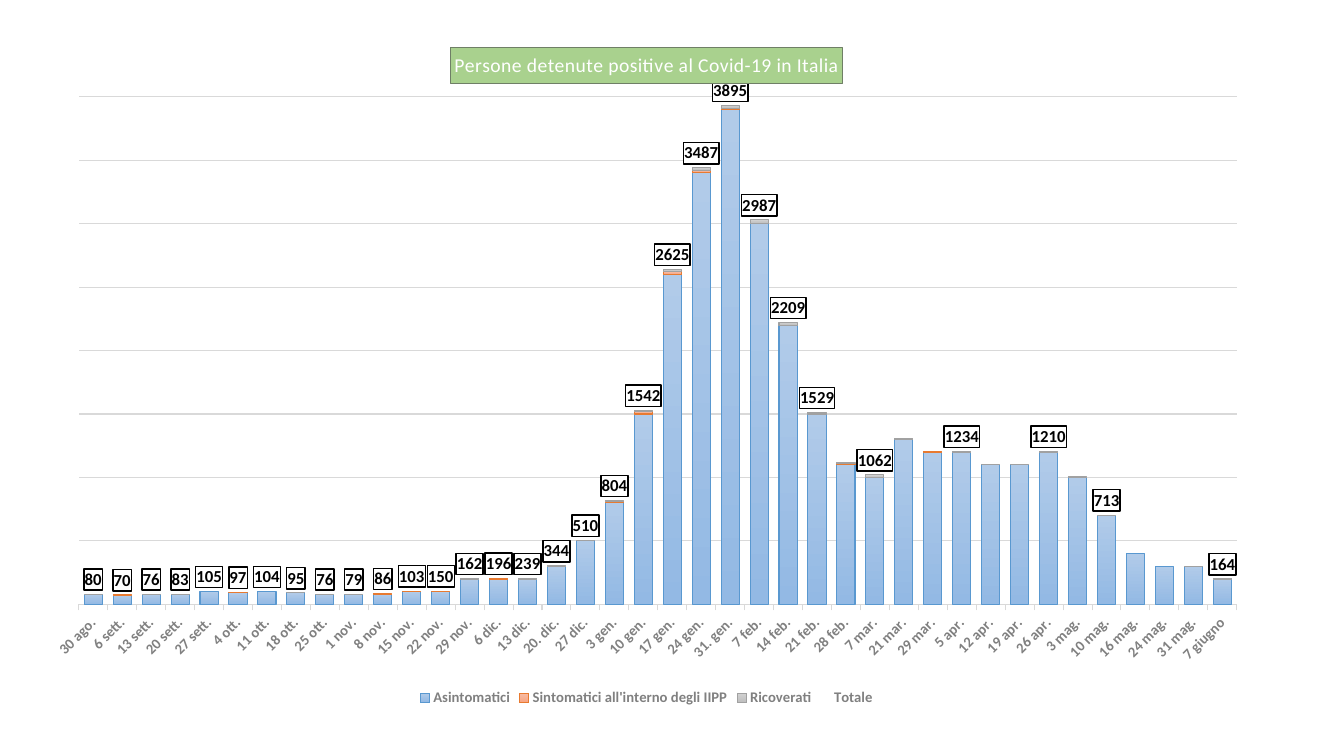
"""Build a slide with a stacked column chart of positive detainees in Italy."""
from lxml.etree import SubElement
from pptx import Presentation
from pptx.chart.data import CategoryChartData
from pptx.dml.color import RGBColor
from pptx.enum.chart import (XL_CHART_TYPE, XL_LABEL_POSITION,
                             XL_LEGEND_POSITION, XL_TICK_LABEL_POSITION, XL_TICK_MARK)
from pptx.oxml import parse_xml
from pptx.oxml.ns import nsdecls, qn
from pptx.util import Pt

TITLE = "Persone detenute positive al Covid-19 in Italia"
DATES = [
    "30 ago.", "6 sett.", "13 sett.", "20 sett.", "27 sett.", "4 ott.", "11 ott.", "18 ott.",
    "25 ott.", "1 nov.", "8 nov.", "15 nov.", "22 nov.", "29 nov.", "6 dic.", "13 dic.",
    "20. dic.", "27 dic.", "3 gen.", "10 gen.", "17 gen.", "24 gen.", "31. gen.", "7 feb.",
    "14 feb.", "21 feb.", "28 feb.", "7 mar.", "21 mar.", "29 mar.", "5 apr.", "12 apr.",
    "19 apr.", "26 apr.", "3 mag.", "10 mag.", "16 mag.", "24 mag.", "31 mag.", "7 giugno"]
WELL = [
    80, 70, 80, 80, 100, 90, 100, 90, 80, 80, 80, 100, 100, 200, 200, 200, 300, 500, 800, 1500,
    2600, 3400, 3900, 3000, 2200, 1500, 1100, 1000, 1300, 1200, 1200, 1100, 1100, 1200, 1000,
    700, 400, 300, 300, 200]
TOTALS = [
    80, 70, 76, 83, 105, 97, 104, 95, 76, 79, 86, 103, 150, 162, 196, 239, 344, 510, 804, 1542,
    2625, 3487, 3895, 2987, 2209, 1529, 1160, 1062, 1341, 1208, 1234, 1080, 1069, 1210, 1022,
    713, 420, 302, 256, 164]
SICK = {"6 sett.": 5, "4 ott.": 5, "8 nov.": 5, "15 nov.": 5, "22 nov.": 5, "6 dic.": 5,
        "3 gen.": 10, "10 gen.": 20, "17 gen.": 20, "24 gen.": 20, "31. gen.": 10,
        "28 feb.": 10, "29 mar.": 5}
WARD = {"30 ago.": 1, "13 sett.": 1, "20 sett.": 1, "18 ott.": 1, "25 ott.": 1, "1 nov.": 1,
        "29 nov.": 2, "13 dic.": 2, "20. dic.": 4, "27 dic.": 6, "3 gen.": 8, "10 gen.": 10,
        "17 gen.": 20, "24 gen.": 20, "31. gen.": 20, "7 feb.": 30, "14 feb.": 20,
        "21 feb.": 10, "28 feb.": 10, "7 mar.": 20, "21 mar.": 10, "5 apr.": 6, "12 apr.": 5,
        "19 apr.": 5, "26 apr.": 5, "3 mag.": 5, "10 mag.": 4, "31 mag.": 1, "7 giugno": 1}
BARE = ["28 feb.", "21 mar.", "29 mar.", "12 apr.", "19 apr.", "3 mag.",
        "16 mag.", "24 mag.", "31 mag."]
HEX = {"white": "FFFFFF", "black": "000000", "grey": "808080", "grid": "D9D9D9",
       "green": "A9D18E", "edge": "6F7F66"}
BARS = [("Asintomatici", "B1CBE9", "93B9E4", "5998D0"),
        ("Sintomatici all'interno degli IIPP", "F7BDA5", "F8A582", "E87A30"),
        ("Ricoverati", "D2D2D2", "C0C0C0", "A1A1A1")]
FRAME = (22.3, 20.2, 879.1, 487.4)
PLOT = (56.3, 69.1, 827.2, 362.7)
HEAD = (322, 33.8)


def style(font, size, color, bold=False):
    font.name, font.size, font.bold = "Calibri", Pt(size), bold
    font.color.rgb = RGBColor.from_string(HEX[color])


def write(frame, text, size=14, color="white", bold=False, gap=0):
    frame.text = text
    run = frame.paragraphs[0].runs[0]
    style(run.font, size, color, bold)
    run.font._element.set("spc", str(gap))


def stroke(line, color, width=0.75):
    line.color.rgb = RGBColor.from_string(color)
    line.width = Pt(width)


def place(node, box, index, inner=False):
    for old in node.findall(qn("c:layout")):
        node.remove(old)
    left, top, wide, high = FRAME
    spot = [(box[0] - left) / wide, (box[1] - top) / high]
    if inner:
        spot += [box[2] / wide, box[3] / high]
    layout = parse_xml(f"<c:layout {nsdecls('c')}><c:manualLayout/></c:layout>")
    if inner:
        SubElement(layout[0], qn("c:layoutTarget"), val="inner")
    for key in "xy":
        SubElement(layout[0], qn(f"c:{key}Mode"), val="edge")
    for key, value in zip("xywh", spot):
        SubElement(layout[0], qn(f"c:{key}"), val=str(value))
    node.insert(index, layout)


def label(series):
    marks = series.data_labels
    marks.show_value = True
    marks.position = XL_LABEL_POSITION.INSIDE_BASE
    style(marks.font, 12, "black", True)
    node = marks._element
    node.find(qn("c:txPr")).addprevious(parse_xml(
        f"<c:spPr {nsdecls('c', 'a')}>"
        f"<a:solidFill><a:srgbClr val='{HEX['white']}'/></a:solidFill>"
        f"<a:ln w='{Pt(1)}'><a:solidFill><a:srgbClr val='{HEX['black']}'/></a:solidFill></a:ln>"
        "</c:spPr>"))
    for rank, date in enumerate(BARE):
        node.insert(rank, parse_xml(
            f"<c:dLbl {nsdecls('c')}><c:idx val='{DATES.index(date)}'/>"
            "<c:delete val='1'/></c:dLbl>"))


def fill_data():
    sick, ward = ([part.get(date, 0) for date in DATES] for part in (SICK, WARD))
    data = CategoryChartData()
    data.categories = DATES
    for bar, values in zip(BARS, (WELL, sick, ward)):
        data.add_series(bar[0], values)
    data.add_series("Totale", TOTALS)
    return data


def set_axes(chart):
    dates, count = chart.category_axis, chart.value_axis
    style(dates.tick_labels.font, 10.5, "grey", True)
    dates._element.find(qn("c:txPr")).find(qn("a:bodyPr")).set("rot", "-2700000")
    dates.major_tick_mark = XL_TICK_MARK.OUTSIDE
    dates.tick_label_position = XL_TICK_LABEL_POSITION.LOW
    stroke(dates.format.line, HEX["grid"])
    count.minimum_scale, count.maximum_scale, count.major_unit = 0, 4000, 500
    count.visible = False
    count.has_major_gridlines = True
    stroke(count.major_gridlines.format.line, HEX["grid"])


def set_bars(plot):
    plot.gap_width, plot.overlap = 60, 100
    for series, (_, light, dark, edge) in zip(plot.series, BARS):
        fill = series.format.fill
        fill.gradient()
        fill.gradient_angle = 270
        for stop, color, spot in zip(fill.gradient_stops, (light, dark), (0, 1)):
            stop.color.rgb = RGBColor.from_string(color)
            stop.position = spot
        stroke(series.format.line, edge)
    total = plot.series[3]
    total.format.fill.background()
    total.format.line.fill.background()
    label(total)


def main():
    deck = Presentation()
    deck.slide_width, deck.slide_height = Pt(960), Pt(540)
    slide = deck.slides.add_slide(deck.slide_layouts[6])
    chart = slide.shapes.add_chart(
        XL_CHART_TYPE.COLUMN_STACKED, *map(Pt, FRAME), fill_data()).chart
    style(chart.font, 10, "black")
    chart.has_title = True
    title = chart.chart_title
    write(title.text_frame, TITLE, gap=20)
    title.include_in_layout = False
    title.format.fill.solid()
    title.format.fill.fore_color.rgb = RGBColor.from_string(HEX["green"])
    stroke(title.format.line, HEX["edge"])
    place(title._element, HEAD, 1)
    chart.has_legend = True
    chart.legend.position = XL_LEGEND_POSITION.BOTTOM
    chart.legend.include_in_layout = False
    style(chart.legend.font, 10.5, "grey", True)
    set_axes(chart)
    set_bars(chart.plots[0])
    place(chart._chartSpace.chart.plotArea, PLOT, 0, inner=True)
    deck.save("out.pptx")


if __name__ == "__main__":
    main()
